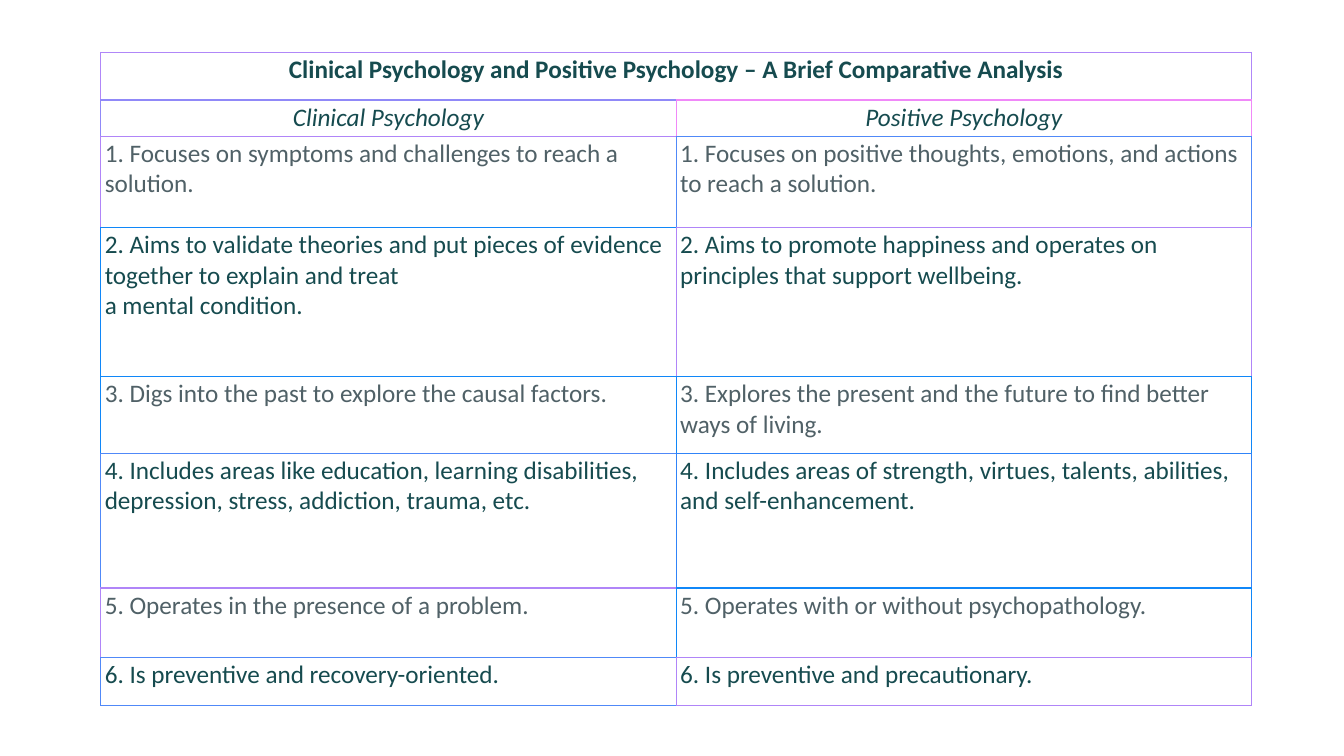
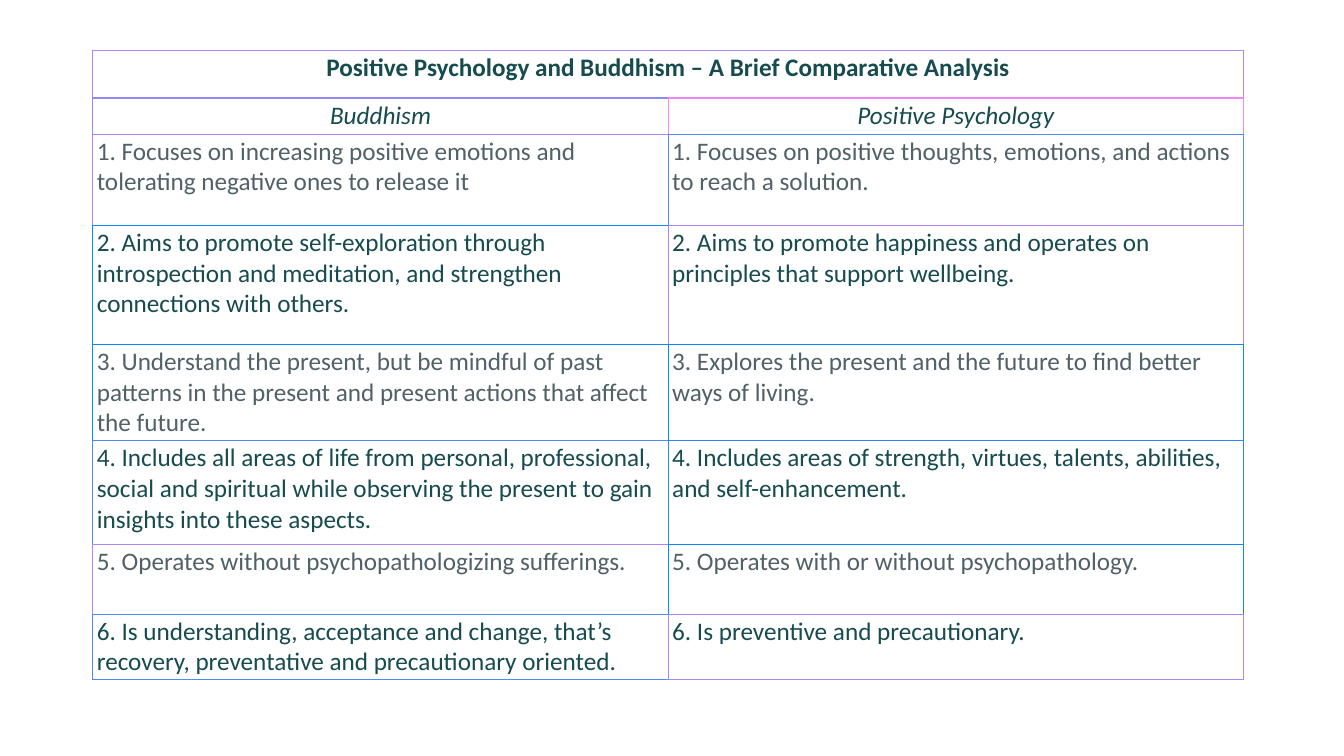
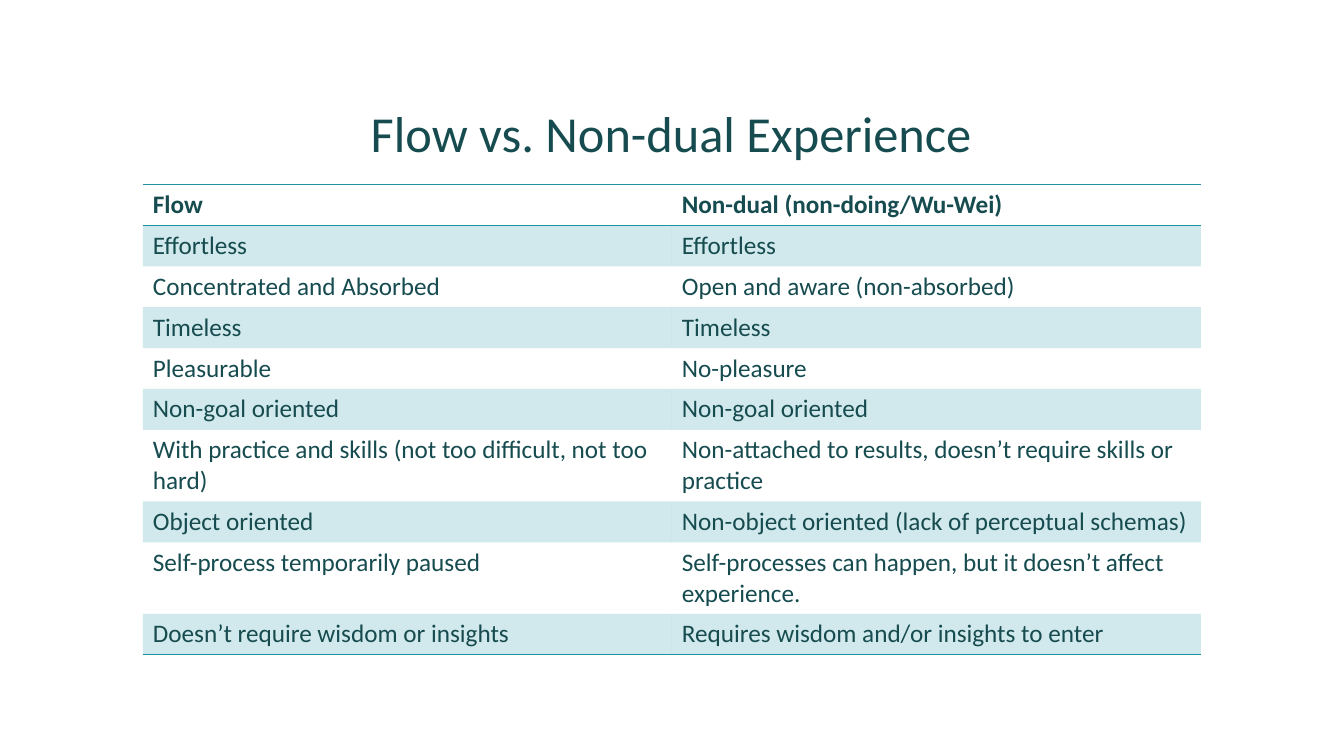
from lxml import etree
from pptx import Presentation
from pptx.dml.color import RGBColor
from pptx.enum import text
from pptx.oxml import ns
from pptx.util import Cm, Pt

# Colours
INK = RGBColor(0x16, 0x4B, 0x4F)
GREY = RGBColor(0x50, 0x61, 0x67)
WHITE = RGBColor(0xFF, 0xFF, 0xFF)
TEAL = RGBColor(0x1B, 0x91, 0xA1)
LILAC = RGBColor(0xB0, 0x87, 0xF8)
PERIWINKLE = RGBColor(0x90, 0x89, 0xF8)
PINK = RGBColor(0xF0, 0x89, 0xF8)
PURPLE = RGBColor(0xB0, 0x85, 0xF8)
CORNFLOWER = RGBColor(0x50, 0x89, 0xF8)
AZURE = RGBColor(0x10, 0x87, 0xF8)
ROYAL = RGBColor(0x30, 0x84, 0xF8)

# Border colour of each comparison cell
EDGES = [
    (LILAC, LILAC),
    (PERIWINKLE, PINK),
    (PURPLE, CORNFLOWER),
    (AZURE, PURPLE),
    (AZURE, AZURE),
    (CORNFLOWER, ROYAL),
    (PURPLE, AZURE),
    (CORNFLOWER, PURPLE),
]

# Wording
POSITIVE = [
    "Positive Psychology",
    "1. Focuses on positive thoughts, emotions, and actions to reach a solution.",
    "2. Aims to promote happiness and operates on principles that support wellbeing.",
    "3. Explores the present and the future to find better ways of living.",
    "4. Includes areas of strength, virtues, talents, abilities, and self-enhancement.",
    "5. Operates with or without psychopathology.",
    "6. Is preventive and precautionary.",
]
CLINICAL = [
    "Clinical Psychology",
    "1. Focuses on symptoms and challenges to reach a solution.",
    "2. Aims to validate theories and put pieces of evidence together to explain "
    "and treat\na mental condition.",
    "3. Digs into the past to explore the causal factors.",
    "4. Includes areas like education, learning disabilities,\n"
    "depression, stress, addiction, trauma, etc.",
    "5. Operates in the presence of a problem.",
    "6. Is preventive and recovery-oriented.",
]
BUDDHISM = [
    "Buddhism",
    "1. Focuses on increasing positive emotions and tolerating negative ones to release it",
    "2. Aims to promote self-exploration through introspection and meditation, "
    "and strengthen connections with others.",
    "3. Understand the present, but be mindful of past patterns in the present "
    "and present actions that affect the future.",
    "4. Includes all areas of life from personal, professional, social and spiritual "
    "while observing the present to gain insights into these aspects.",
    "5. Operates without psychopathologizing sufferings.",
    "6. Is understanding, acceptance and change, that’s recovery, preventative "
    "and precautionary oriented.",
]
FLOW = [
    ("Flow", "Non-dual (non-doing/Wu-Wei)"),
    ("Effortless", "Effortless"),
    ("Concentrated and Absorbed", "Open and aware (non-absorbed)"),
    ("Timeless", "Timeless"),
    ("Pleasurable", "No-pleasure"),
    ("Non-goal oriented", "Non-goal oriented"),
    ("With practice and skills (not too difficult, not too hard)",
     "Non-attached to results, doesn’t require skills or practice"),
    ("Object oriented", "Non-object oriented (lack of perceptual schemas)"),
    ("Self-process temporarily paused",
     "Self-processes can happen, but it doesn’t affect experience."),
    ("Doesn’t require wisdom or insights", "Requires wisdom and/or insights to enter"),
]


class Deck:
    """Shared style and the slide being built."""

    TITLE_ONLY, BLANK = 5, 6
    FONT = {"name": "Calibri", "size": Pt(18), "bold": False, "italic": False}
    MARGINS = {"margin_left": Cm(0.1), "margin_right": Cm(0.1),
               "margin_top": Cm(0.05), "margin_bottom": Cm(0.05)}

    def __init__(self):
        self.deck = Presentation()
        self.deck.slide_width, self.deck.slide_height = Cm(33.87), Cm(19.05)
        self.page = None

    def new_page(self, layout):
        self.page = self.deck.slides.add_slide(self.deck.slide_layouts[layout])

    def put_text(self, frame, wording, color=INK, align=None, **changes):
        para = frame.paragraphs[0]
        para.text = wording
        para.alignment = align
        for span in para.runs:
            for name, value in {**self.FONT, **changes}.items():
                setattr(span.font, name, value)
            span.font.color.rgb = color

    def title(self, wording, left, top, width, height):
        box = self.page.shapes.title
        place = {"left": left, "top": top, "width": width, "height": height}
        for name, value in place.items():
            setattr(box, name, Cm(value))
        box.text_frame.vertical_anchor = text.MSO_ANCHOR.BOTTOM
        self.put_text(box.text_frame, wording, align=text.PP_ALIGN.CENTER, size=Pt(36))
        box.text_frame.paragraphs[0].line_spacing = 0.9

    def table(self, left, top, column, heights):
        frame = self.page.shapes.add_table(
            len(heights), 2, Cm(left), Cm(top), Cm(2 * column), Cm(sum(heights)))
        table = frame.table
        table.first_row = table.horz_banding = False
        for item in table.columns:
            item.width = Cm(column)
        for item, height in zip(table.rows, heights):
            item.height = Cm(height)
        return table

    def fill(self, cell, color, opacity=100):
        if color is None:
            cell.fill.background()
            return
        cell.fill.solid()
        cell.fill.fore_color.rgb = color
        if opacity < 100:
            tone = cell._tc.tcPr.find(".//" + ns.qn("a:srgbClr"))
            etree.SubElement(tone, ns.qn("a:alpha"), val=str(opacity * 1000))

    def borders(self, cell, left, right, top, bottom):
        props = cell._tc.get_or_add_tcPr()
        sides = zip("LRTB", (left, right, top, bottom))
        for index, (side, color) in enumerate(sides):
            line = etree.Element(ns.qn("a:ln" + side), w=str(Pt(1)))
            if color is None:
                etree.SubElement(line, ns.qn("a:noFill"))
            else:
                solid = etree.SubElement(line, ns.qn("a:solidFill"))
                etree.SubElement(solid, ns.qn("a:srgbClr"), val=str(color))
            props.insert(index, line)

    def comparison(self, heading, first, left, top, heights):
        """Two lists of points side by side under a merged heading."""
        self.new_page(self.BLANK)
        table = self.table(left, top, 14.5, heights)
        table.cell(0, 0).merge(table.cell(0, 1))
        rows = [(heading, "")] + list(zip(first, POSITIVE))
        for row, pair in enumerate(rows):
            below = EDGES[min(row + 1, len(rows) - 1)]
            for column, wording in enumerate(pair):
                cell = table.cell(row, column)
                for name, value in self.MARGINS.items():
                    setattr(cell, name, value)
                self.put_text(cell.text_frame, wording,
                              color=GREY if row > 1 and row % 2 == 0 else INK,
                              align=text.PP_ALIGN.CENTER if row < 2 else None,
                              bold=row == 0, italic=row == 1)
                self.fill(cell, WHITE)
                # Each shared edge takes the colour of the cell after it
                own = EDGES[row][column]
                self.borders(cell, own, EDGES[row][1], own, below[column])

    def banded(self, rows, left, top, column, height):
        """Light table with tinted odd rows and three rules."""
        table = self.table(left, top, column, [height] * len(rows))
        rules = {0: TEAL, 1: TEAL, len(rows): TEAL}
        for row, pair in enumerate(rows):
            for index, wording in enumerate(pair):
                cell = table.cell(row, index)
                self.put_text(cell.text_frame, wording, bold=row == 0)
                self.fill(cell, TEAL if row % 2 else None, opacity=20)
                self.borders(cell, None, None, rules.get(row), rules.get(row + 1))


def main():
    show = Deck()

    # Clinical and positive psychology
    show.comparison("Clinical Psychology and Positive Psychology – A Brief Comparative Analysis",
                    CLINICAL, 2.54, 1.32,
                    [1.2, 0.91, 2.3, 3.76, 1.93, 3.4, 1.75, 1.2])

    # Positive psychology and Buddhism
    show.comparison("Positive Psychology and Buddhism – A Brief Comparative Analysis",
                    BUDDHISM, 2.34, 1.27,
                    [1.2, 0.91, 2.3, 3, 1.93, 2.62, 1.75, 1.2])

    # Flow and non-dual experience
    show.new_page(show.TITLE_ONLY)
    show.title("Flow vs. Non-dual Experience", 3.58, 1.07, 26.67, 3.17)
    show.banded(FLOW, 3.6, 4.65, 13.33, 1.03)

    show.deck.save("out.pptx")


if __name__ == "__main__":
    main()
